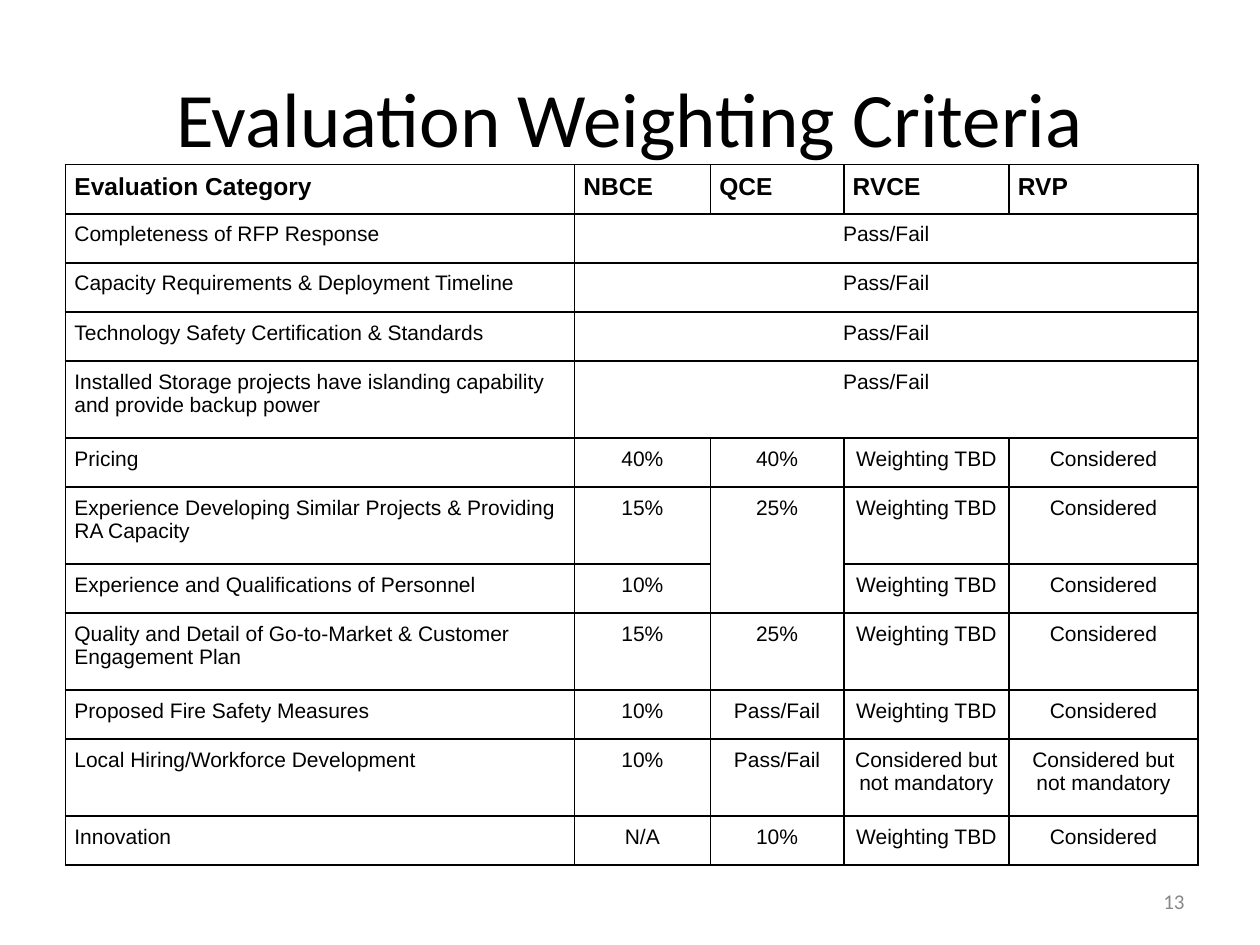
from lxml.etree import SubElement
from pptx import Presentation
from pptx.dml.color import RGBColor
from pptx.enum.text import MSO_ANCHOR as Anchor, PP_ALIGN as Align
from pptx.oxml.ns import qn
from pptx.util import Cm, Pt

COLORS = {"text": "000000", "border": "000000", "number": "888888"}
TITLE = {"name": "Calibri", "size": Pt(44), "bold": False}
NUMBER = {"name": "Calibri", "size": Pt(12), "bold": False}
HEADER = {"name": "Arial", "size": Pt(14), "bold": True}
BODY = {"name": "Arial", "size": Pt(12), "bold": False}

COLUMN_WIDTHS = [10.26, 2.74, 2.69, 3.33, 3.81]
ROW_HEIGHT, TALL_ROW_HEIGHT = 0.99, 1.55
TALL_ROWS = {4, 6, 8, 10}
CELL_MARGIN = 0.18
TBD, CONSIDERED, PASS_FAIL = "Weighting TBD", "Considered", "Pass/Fail"
OPTIONAL = "Considered but not mandatory"

# None marks a cell covered by a merged block.
SHARED = [PASS_FAIL, None, None, None]
ROWS = [
    ["Evaluation Category", "NBCE", "QCE", "RVCE", "RVP"],
    ["Completeness of RFP Response", *SHARED],
    ["Capacity Requirements & Deployment Timeline", *SHARED],
    ["Technology Safety Certification & Standards", *SHARED],
    ["Installed Storage projects have islanding capability and provide backup power", *SHARED],
    ["Pricing", "40%", "40%", TBD, CONSIDERED],
    ["Experience Developing Similar Projects & Providing RA Capacity",
     "15%", "25%", TBD, CONSIDERED],
    ["Experience and Qualifications of Personnel", "10%", None, TBD, CONSIDERED],
    ["Quality and Detail of Go-to-Market & Customer Engagement Plan",
     "15%", "25%", TBD, CONSIDERED],
    ["Proposed Fire Safety Measures", "10%", PASS_FAIL, TBD, CONSIDERED],
    ["Local Hiring/Workforce Development", "10%", PASS_FAIL, OPTIONAL, OPTIONAL],
    ["Innovation", "N/A", "10%", TBD, CONSIDERED],
]
# First and last (row, column) of each merged block
MERGES = [((row, 1), (row, 4)) for row in range(1, 5)] + [((6, 2), (7, 2))]


def write(text_frame, text, style, color, alignment):
    paragraph = text_frame.paragraphs[0]
    paragraph.alignment = alignment
    run = paragraph.add_run()
    run.text = text
    for attribute, value in style.items():
        setattr(run.font, attribute, value)
    run.font.color.rgb = RGBColor.from_string(COLORS[color])


def add_text(slide, box, text, style, color, alignment):
    text_frame = slide.shapes.add_textbox(*map(Cm, box)).text_frame
    text_frame.word_wrap = True
    text_frame.vertical_anchor = Anchor.MIDDLE
    write(text_frame, text, style, color, alignment)


def add_borders(cell):
    """Draw a one-point line on each side; lines must precede the fill in the XML."""
    properties = cell._tc.get_or_add_tcPr()
    for position, side in enumerate(["lnL", "lnR", "lnT", "lnB"]):
        line = SubElement(properties, qn(f"a:{side}"), w=str(Pt(1)))
        fill = SubElement(line, qn("a:solidFill"))
        SubElement(fill, qn("a:srgbClr"), val=COLORS["border"])
        properties.insert(position, line)


def add_criteria_table(slide, left, top):
    heights = [TALL_ROW_HEIGHT if row in TALL_ROWS else ROW_HEIGHT
               for row in range(len(ROWS))]
    box = left, top, sum(COLUMN_WIDTHS), sum(heights)
    table = slide.shapes.add_table(len(ROWS), len(COLUMN_WIDTHS), *map(Cm, box)).table
    table.first_row = table.horz_banding = False
    for column, width in zip(table.columns, COLUMN_WIDTHS):
        column.width = Cm(width)
    for row, height in zip(table.rows, heights):
        row.height = Cm(height)

    for row_index, texts in enumerate(ROWS):
        for column_index, text in enumerate(texts):
            cell = table.cell(row_index, column_index)
            for side in ("left", "right", "top", "bottom"):
                setattr(cell, f"margin_{side}", Cm(CELL_MARGIN))
            cell.vertical_anchor = Anchor.TOP
            cell.fill.background()
            add_borders(cell)
            if text is not None:
                centered = row_index > 0 and column_index > 0
                write(cell.text_frame, text, BODY if row_index else HEADER, "text",
                      Align.CENTER if centered else Align.LEFT)

    for first, last in MERGES:
        table.cell(*first).merge(table.cell(*last))


def main():
    presentation = Presentation()
    presentation.slide_width, presentation.slide_height = Cm(25.4), Cm(19.05)
    slide = presentation.slides.add_slide(presentation.slide_layouts[6])
    add_text(slide, (1.27, 0.76, 22.86, 3.18), "Evaluation Weighting Criteria",
             TITLE, "text", Align.CENTER)
    add_text(slide, (18.2, 17.66, 5.93, 1.01), "13", NUMBER, "number", Align.RIGHT)
    add_criteria_table(slide, 1.32, 3.32)
    presentation.save("out.pptx")


if __name__ == "__main__":
    main()
